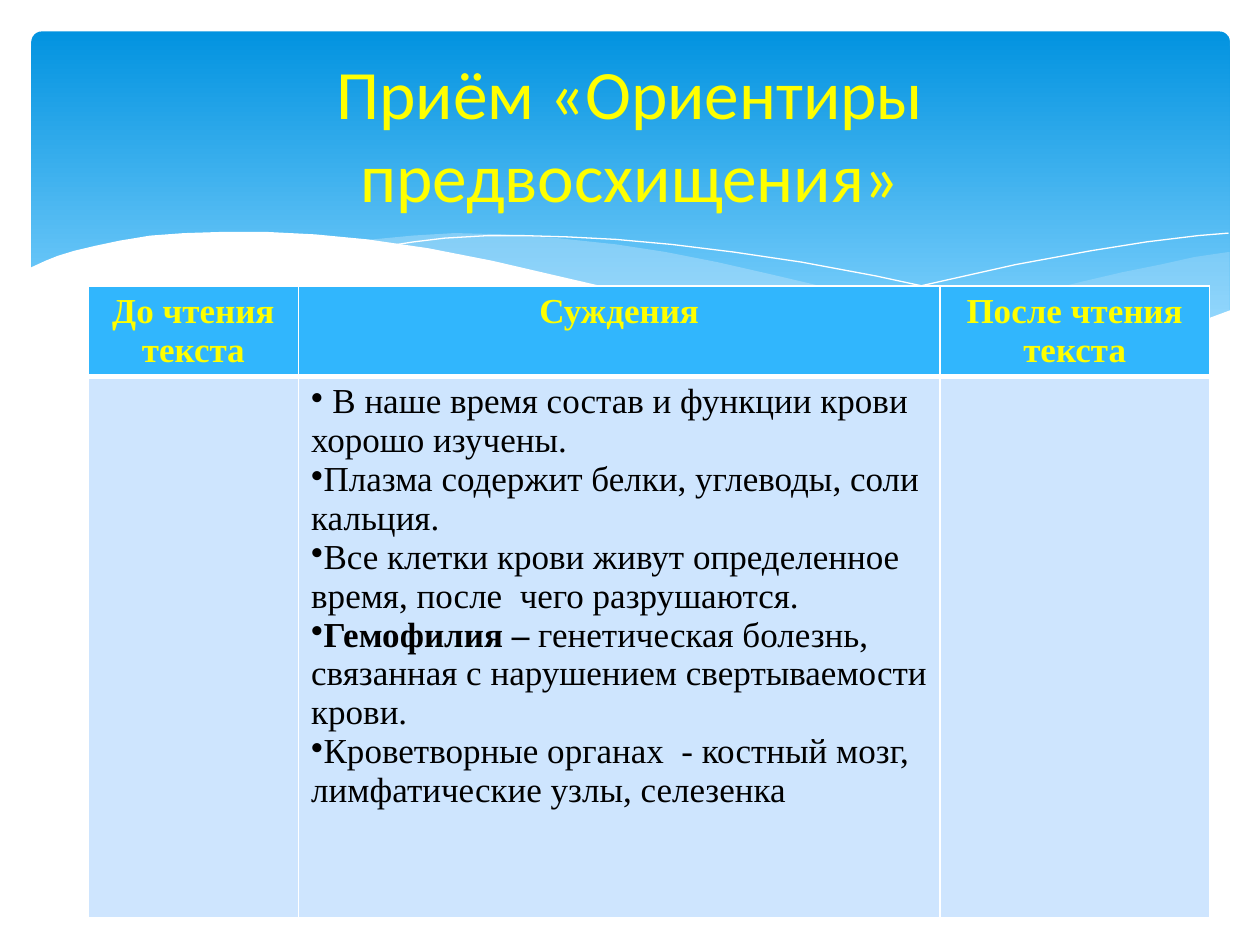
from lxml.etree import SubElement
from pptx import Presentation
from pptx.dml.color import RGBColor
from pptx.enum.shapes import MSO_SHAPE
from pptx.enum.text import MSO_ANCHOR, PP_ALIGN
from pptx.oxml.ns import qn
from pptx.util import Inches, Pt

WHITE = RGBColor(0xFF, 0xFF, 0xFF)
BLACK = RGBColor(0x00, 0x00, 0x00)
YELLOW = RGBColor(0xFF, 0xFF, 0x00)
DEEP_BLUE = RGBColor(0x02, 0x93, 0xE0)
LIGHT_BLUE = RGBColor(0x83, 0xD3, 0xFE)
MIST_BLUE = RGBColor(0xC6, 0xE7, 0xFC)
HEADER_BLUE = RGBColor(0x31, 0xB6, 0xFD)
BODY_BLUE = RGBColor(0xCE, 0xE5, 0xFE)

COLUMNS, ROWS = 100, 75
TITLE_FONT = {"name": "Calibri", "size": Pt(39.6)}
TABLE_FONT = {"name": "Times New Roman", "size": Pt(20)}

RIGHT_MIST = [
    (97.5, 20), (94.8, 20.4), (92.1, 21), (89.1, 21.6), (86.1, 22.3), (80.5, 23.7),
    (75.3, 24.8), (70.6, 25.7), (66.1, 26.5), (69.1, 26.9), (71.9, 27.2), (74.5, 27.5),
    (76.9, 27.7), (80.3, 27.8), (83.5, 27.7), (86.3, 27.5), (88.9, 27.2), (91.3, 26.7),
    (93.5, 26.2), (94.9, 25.7), (97.6, 24.7), (97.6, 20),
]
MIDDLE_MIST = [
    (89.3, 27.3), (86.6, 26.9), (80.7, 26), (74.1, 24.7), (66.8, 23.1), (61.3, 21.8),
    (56.9, 20.8), (52.8, 20), (48.9, 19.4), (44.2, 18.9), (39.9, 18.6), (36.1, 18.5),
    (32.8, 18.7), (28.6, 19.1), (32.3, 19.6), (36.2, 20.3), (40.4, 21.1), (44.9, 22.2),
    (53, 24), (60.1, 25.5), (65, 26.4), (69.5, 27), (73.6, 27.5), (77.3, 27.7),
    (80.7, 27.8), (83.8, 27.8), (86.7, 27.6),
]
LONG_CURVE = [
    (30.9, 19.5), (32.8, 19.2), (35.3, 18.9), (38.7, 18.7), (41.6, 18.7), (45, 18.8),
    (48.9, 19), (53.3, 19.4), (58.2, 20), (63.6, 20.8), (69.5, 21.9), (76, 23.3),
    (83.1, 25.1), (90.7, 27.2),
]
SHORT_CURVE = [
    (61.3, 25.7), (65.3, 24.6), (69.5, 23.5), (74.8, 22.3), (80.6, 21), (86.6, 19.9),
    (91, 19.2), (95.1, 18.7), (97.5, 18.5),
]
WHITE_WAVE = [
    (97.7, 24.6), (95, 25.6), (92, 26.5), (88.7, 27.1), (85, 27.5), (80.9, 27.7),
    (76.1, 27.5), (70.8, 27), (64.8, 26.2), (57.9, 25), (50.3, 23.3), (44.7, 22),
    (39.1, 20.7), (34, 19.7), (29.2, 19), (25, 18.6), (21.1, 18.4), (17.7, 18.4),
    (14.6, 18.5), (11.9, 18.7), (9.5, 19.1), (7.6, 19.5), (5.9, 19.9), (4.6, 20.3),
    (3.6, 20.7), (2.3, 21.3), (2.3, 32.9), (97.7, 32.9),
]

HEADERS = ["До чтения текста", "Суждения", "После чтения текста"]
STATEMENTS = [
    [(" В наше время состав и функции крови хорошо изучены.", False)],
    [("Плазма содержит белки, углеводы, соли кальция.", False)],
    [("Все клетки крови живут определенное время, после  чего разрушаются.", False)],
    [("Гемофилия –", True),
     (" генетическая болезнь, связанная с нарушением свертываемости крови.", False)],
    [("Кроветворные органах  - костный мозг, лимфатические узлы, селезенка", False)],
]


class SlideBuilder:
    def __init__(self, presentation):
        self.slide = presentation.slides.add_slide(presentation.slide_layouts[6])
        self.column = presentation.slide_width / COLUMNS
        self.row = presentation.slide_height / ROWS

    def place(self, across, down):
        return round(across * self.column), round(down * self.row)

    def add_text(self, paragraph, text, color, font, bold=False):
        run = paragraph.add_run()
        run.text = text
        for name, value in {**font, "bold": bold}.items():
            setattr(run.font, name, value)
        run.font.color.rgb = color

    def banner(self, left, top, width, height):
        shape = self.slide.shapes.add_shape(
            MSO_SHAPE.ROUNDED_RECTANGLE, *self.place(left, top), *self.place(width, height))
        shape.adjustments[0] = 0.03
        shape.shadow.inherit = False
        shape.line.fill.background()
        shape.fill.gradient()
        shape.fill.gradient_angle = 270
        stops = [(0, DEEP_BLUE), (0.9, LIGHT_BLUE)]
        for stop, (position, color) in zip(shape.fill.gradient_stops, stops):
            stop.position = position
            stop.color.rgb = color

    def outline(self, points, closed):
        start, *others = [self.place(*point) for point in points]
        builder = self.slide.shapes.build_freeform(*start)
        builder.add_line_segments(others, close=closed)
        shape = builder.convert_to_shape()
        shape.shadow.inherit = False
        return shape

    def wave(self, points, color, opacity=100):
        shape = self.outline(points, True)
        shape.line.fill.background()
        shape.fill.solid()
        shape.fill.fore_color.rgb = color
        if opacity < 100:
            color_element = shape._element.spPr.find(qn("a:solidFill"))[0]
            SubElement(color_element, qn("a:alpha"), val=str(opacity * 1000))

    def curve(self, points):
        shape = self.outline(points, False)
        shape.fill.background()
        shape.line.color.rgb = WHITE
        shape.line.width = Pt(0)

    def title(self, text, left, top, width, height):
        box = self.slide.shapes.add_textbox(*self.place(left, top), *self.place(width, height))
        frame = box.text_frame
        for name, value in {"word_wrap": True, "vertical_anchor": MSO_ANCHOR.MIDDLE}.items():
            setattr(frame, name, value)
        paragraph = frame.paragraphs[0]
        paragraph.alignment = PP_ALIGN.CENTER
        self.add_text(paragraph, text, YELLOW, TITLE_FONT)

    def style_cell(self, cell, color, borders):
        properties = cell._tc.get_or_add_tcPr()
        for side, width in borders.items():
            line = SubElement(properties, qn(f"a:ln{side}"), w=str(Pt(width)))
            fill = SubElement(line, qn("a:solidFill"))
            SubElement(fill, qn("a:srgbClr"), val=str(WHITE))
        cell.fill.solid()
        cell.fill.fore_color.rgb = color

    def bullet(self, paragraph):
        properties = paragraph._p.get_or_add_pPr()
        for name in ("marL", "indent"):
            properties.set(name, "0")
        SubElement(properties, qn("a:buChar"), char="•")

    def table(self, left, top, widths, heights):
        table = self.slide.shapes.add_table(
            len(heights), len(widths), *self.place(left, top),
            *self.place(sum(widths), sum(heights))).table
        for column, width in zip(table.columns, widths):
            column.width = round(width * self.column)
        for row, height in zip(table.rows, heights):
            row.height = round(height * self.row)
        for index, header in enumerate(HEADERS):
            heading, body = table.cell(0, index), table.cell(1, index)
            self.style_cell(heading, HEADER_BLUE, {"L": 1, "R": 1, "T": 1, "B": 3})
            self.style_cell(body, BODY_BLUE, {"L": 1, "R": 1, "T": 3, "B": 1})
            paragraph = heading.text_frame.paragraphs[0]
            paragraph.alignment = PP_ALIGN.CENTER
            self.add_text(paragraph, header, YELLOW, TABLE_FONT, True)
        frame = table.cell(1, 1).text_frame
        for index, statement in enumerate(STATEMENTS):
            paragraph = frame.add_paragraph() if index else frame.paragraphs[0]
            self.bullet(paragraph)
            for text, bold in statement:
                self.add_text(paragraph, text, BLACK, TABLE_FONT, bold)


def main():
    presentation = Presentation()
    presentation.slide_width = Inches(10)
    presentation.slide_height = Inches(7.5)
    builder = SlideBuilder(presentation)
    builder.banner(2.5, 2.5, 95.1, 27)
    builder.wave(RIGHT_MIST, MIST_BLUE, 29)
    builder.wave(MIDDLE_MIST, MIST_BLUE, 40)
    builder.curve(LONG_CURVE)
    builder.curve(SHORT_CURVE)
    builder.wave(WHITE_WAVE, WHITE)
    builder.table(7, 22.7, [16.7, 50.9, 21.4], [7, 43])
    builder.title("Приём «Ориентиры предвосхищения»", 5, 3.7, 90, 13.7)
    presentation.save("out.pptx")


if __name__ == "__main__":
    main()
